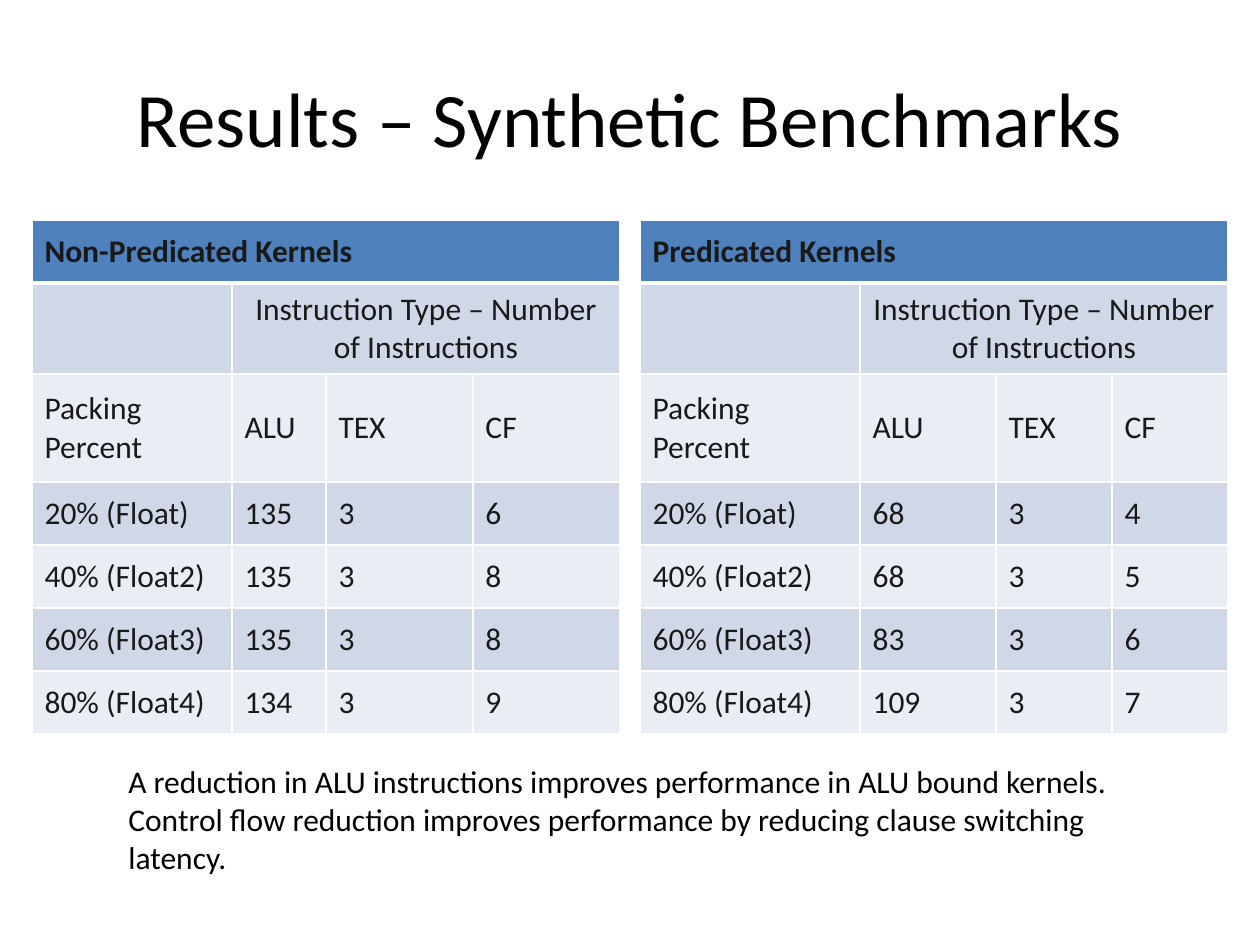
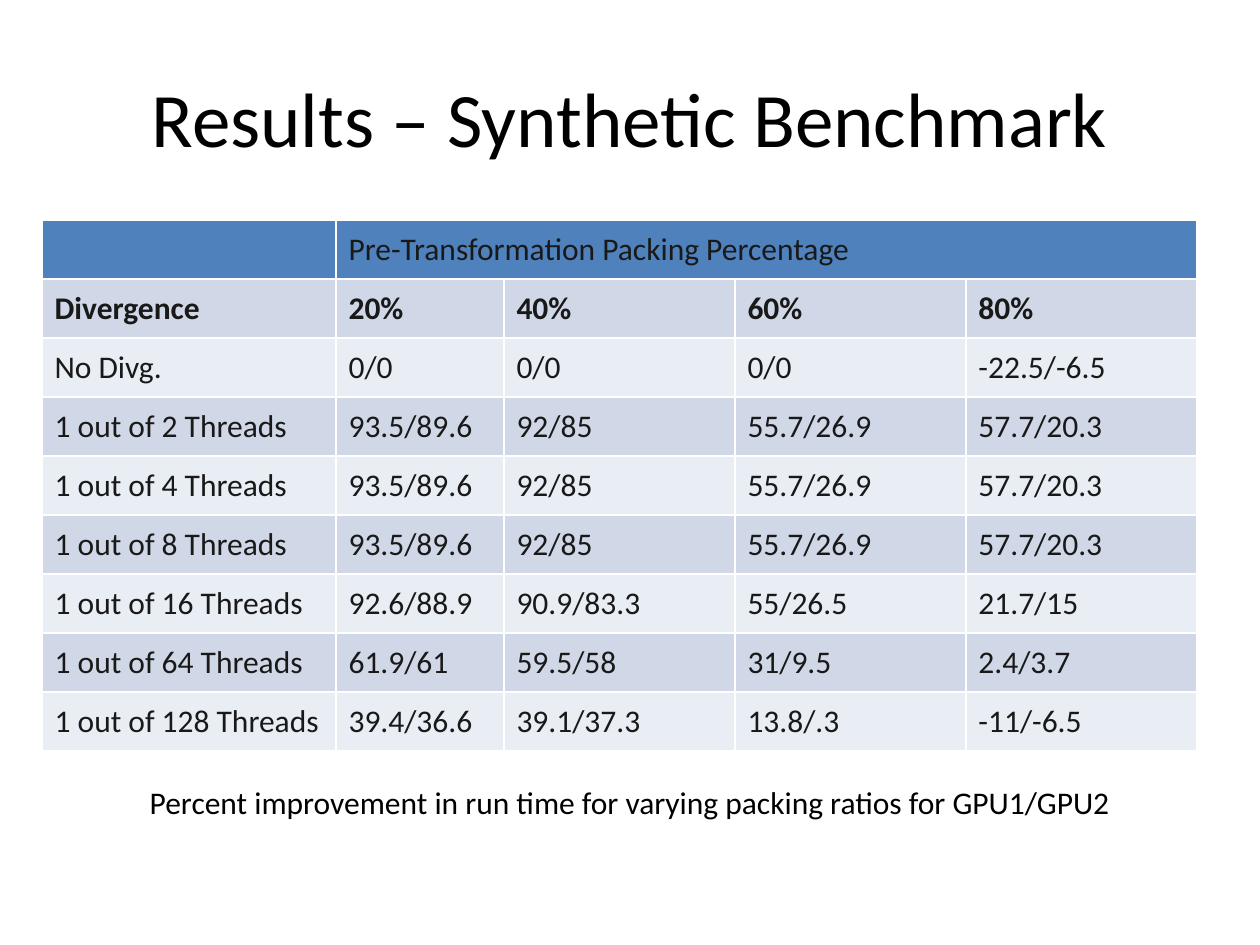
from lxml import etree
from pptx import Presentation
from pptx import util as u
from pptx.dml.color import RGBColor
from pptx.enum import text
from pptx.oxml import ns

PX_PER_INCH = 126
FONT = "Calibri"
BLACK, INK, WHITE = "000000", "191919", "FFFFFF"
HEADER, BAND_DARK, BAND_LIGHT = "4F81BD", "D0D8E8", "E9EDF4"
TITLE_BOX = (63, 38, 1134, 158)
TABLE_TOP = 220

KERNEL_HEIGHTS = [63, 91, 108, 63, 63, 63, 63]
KERNEL_SPANS = [(0, 0, 4), (1, 1, 3)]
PACKINGS = ["20% (Float)", "40% (Float2)", "60% (Float3)", "80% (Float4)"]


def kernel_table(left, widths, heading, counts):
    rows = [
        [heading, "", "", ""],
        ["", "Instruction Type – Number of Instructions", "", ""],
        ["Packing Percent", "ALU", "TEX", "CF"],
    ]
    rows += [[packing, *count] for packing, count in zip(PACKINGS, counts)]
    return dict(left=left, widths=widths, heights=KERNEL_HEIGHTS, rows=rows,
                spans=KERNEL_SPANS, bold_row=0, centred=[(1, 1)], header_rule=3)


DIVERGENCE_ROWS = [
    ["", "Pre-Transformation Packing Percentage", "", "", ""],
    ["Divergence", "20%", "40%", "60%", "80%"],
    ["No Divg.", "0/0", "0/0", "0/0", "-22.5/-6.5"],
    ["1 out of 2 Threads", "93.5/89.6", "92/85", "55.7/26.9", "57.7/20.3"],
    ["1 out of 4 Threads", "93.5/89.6", "92/85", "55.7/26.9", "57.7/20.3"],
    ["1 out of 8 Threads", "93.5/89.6", "92/85", "55.7/26.9", "57.7/20.3"],
    ["1 out of 16 Threads", "92.6/88.9", "90.9/83.3", "55/26.5", "21.7/15"],
    ["1 out of 64 Threads", "61.9/61", "59.5/58", "31/9.5", "2.4/3.7"],
    ["1 out of 128 Threads", "39.4/36.6", "39.1/37.3", "13.8/.3", "-11/-6.5"],
]

SLIDES = [
    dict(
        title="Results – Synthetic Benchmarks",
        tables=[
            kernel_table(32, [200, 94, 147, 147], "Non-Predicated Kernels",
                         [(135, 3, 6), (135, 3, 8), (135, 3, 8), (134, 3, 9)]),
            kernel_table(640, [220, 136, 116, 116], "Predicated Kernels",
                         [(68, 3, 4), (68, 3, 5), (83, 3, 6), (109, 3, 7)]),
        ],
        caption="A reduction in ALU instructions improves performance in ALU bound kernels. "
                "Control flow reduction improves performance by reducing clause switching latency.",
        caption_box=(116, 756, 1040, 127),
        caption_align=text.PP_ALIGN.LEFT,
    ),
    dict(
        title="Results – Synthetic Benchmark",
        tables=[dict(left=42, widths=[294, 168, 231, 231, 231],
                     heights=[59] * len(DIVERGENCE_ROWS), rows=DIVERGENCE_ROWS,
                     spans=[(0, 1, 4)], bold_row=1, centred=[], header_rule=1)],
        caption="Percent improvement in run time for varying packing ratios for GPU1/GPU2",
        caption_box=(63, 777, 1134, 50),
        caption_align=text.PP_ALIGN.CENTER,
    ),
]


def px(length):
    return u.Emu(round(length * 914400 / PX_PER_INCH))


def color(value):
    return RGBColor.from_string(value)


def write(frame, words, size, ink, align=text.PP_ALIGN.LEFT, bold=False):
    frame.text = str(words)
    frame.word_wrap = True
    para = frame.paragraphs[0]
    para.alignment = align
    for font in [para.font] + [span.font for span in para.runs]:
        font.name, font.size, font.bold = FONT, u.Pt(size), bold
        font.color.rgb = color(ink)


def border(cell, top, bottom):
    properties = cell._tc.get_or_add_tcPr()
    for position, (side, width) in enumerate(
            [("lnL", 1), ("lnR", 1), ("lnT", top), ("lnB", bottom)]):
        line = etree.Element(ns.qn("a:" + side), w=str(u.Pt(width)))
        fill = etree.SubElement(line, ns.qn("a:solidFill"))
        etree.SubElement(fill, ns.qn("a:srgbClr"), val=WHITE)
        properties.insert(position, line)


def add_table(page, left, widths, heights, rows, spans, bold_row, centred, header_rule):
    table = page.shapes.add_table(len(rows), len(widths), px(left), px(TABLE_TOP),
                                  px(sum(widths)), px(sum(heights))).table
    for column, width in zip(table.columns, widths):
        column.width = px(width)
    for r, (height, values) in enumerate(zip(heights, rows)):
        table.rows[r].height = px(height)
        band = HEADER if r == 0 else BAND_DARK if r % 2 else BAND_LIGHT
        for c, value in enumerate(values):
            cell = table.cell(r, c)
            cell.fill.solid()
            cell.fill.fore_color.rgb = color(band)
            cell.vertical_anchor = text.MSO_ANCHOR.MIDDLE
            align = text.PP_ALIGN.CENTER if (r, c) in centred else text.PP_ALIGN.LEFT
            write(cell.text_frame, value, 18, INK, align, r == bold_row)
            border(cell, header_rule if r == 1 else 1, header_rule if r == 0 else 1)
    for r, c, count in spans:
        table.cell(r, c).merge(table.cell(r, c + count - 1))


def add_page(deck, title, tables, caption, caption_box, caption_align):
    page = deck.slides.add_slide(deck.slide_layouts[5])
    heading = page.shapes.title
    heading.left, heading.top, heading.width, heading.height = map(px, TITLE_BOX)
    write(heading.text_frame, title, 44, BLACK, text.PP_ALIGN.CENTER)
    heading.text_frame.vertical_anchor = text.MSO_ANCHOR.MIDDLE
    for table in tables:
        add_table(page, **table)
    box = page.shapes.add_textbox(*map(px, caption_box))
    write(box.text_frame, caption, 18, BLACK, caption_align)


def main():
    deck = Presentation()
    deck.slide_width, deck.slide_height = u.Inches(10), u.Inches(7.5)
    for content in SLIDES:
        add_page(deck, **content)
    deck.save("out.pptx")


if __name__ == "__main__":
    main()
